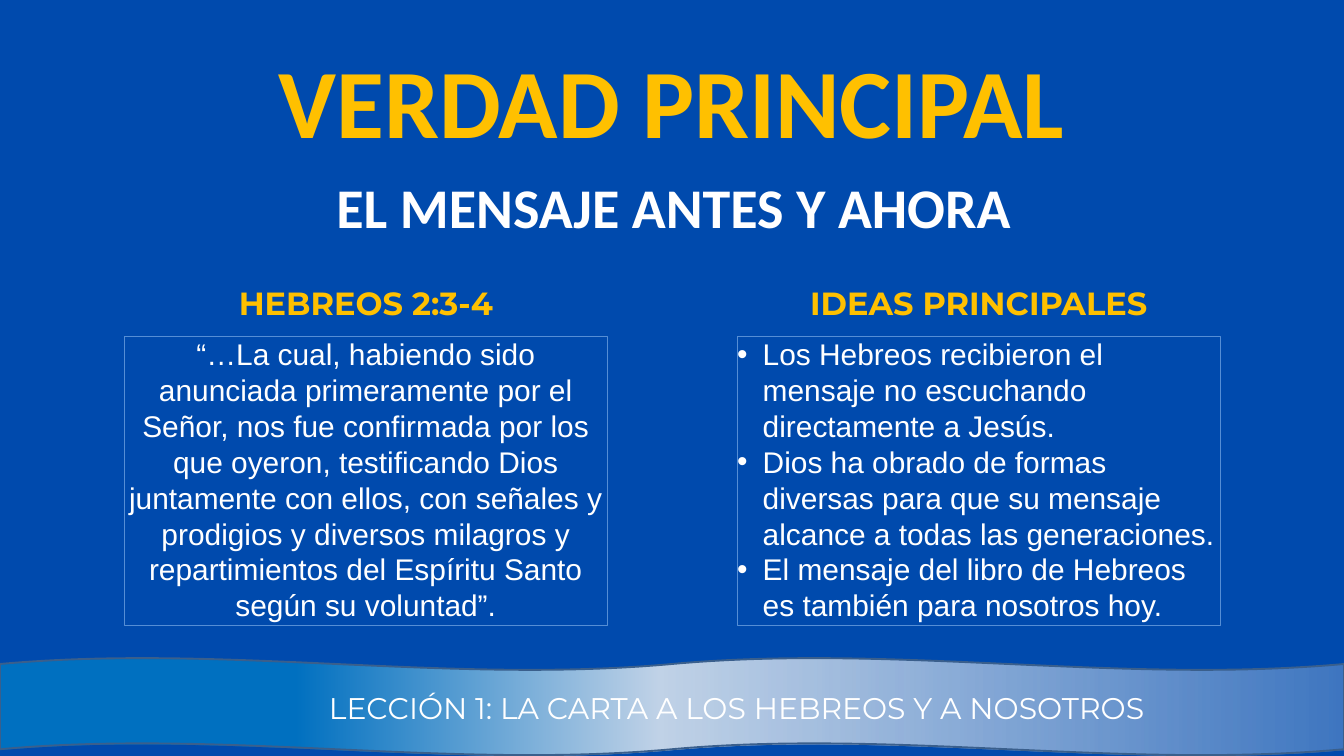
from lxml import etree
from pptx import Presentation
from pptx.dml.color import RGBColor
from pptx.enum.shapes import MSO_SHAPE
from pptx.enum.text import MSO_ANCHOR, MSO_AUTO_SIZE, PP_ALIGN
from pptx.oxml.ns import qn
from pptx.util import Inches, Pt

CENTER, LEFT = PP_ALIGN.CENTER, PP_ALIGN.LEFT
BLUE = RGBColor(0x00, 0x4A, 0xAD)
GOLD = RGBColor(0xFF, 0xC0, 0x00)
WHITE = RGBColor(0xFF, 0xFF, 0xFF)
BOX_LINE = RGBColor(0x55, 0x8E, 0xD5)
WAVE_LINE = RGBColor(0x3A, 0x5F, 0x8C)
# Position %, colour, opacity %
WAVE_STOPS = [
    (22, RGBColor(0x00, 0x70, 0xC0), 100),
    (49, RGBColor(0xC0, 0xD2, 0xE7), 100),
    (100, RGBColor(0xCA, 0xD9, 0xEB), 30),
]

# Content
TITLE = "VERDAD PRINCIPAL"
SUBTITLE = "EL MENSAJE ANTES Y AHORA"
FOOTER = "LECCIÓN 1: LA CARTA A LOS HEBREOS Y A NOSOTROS"
COLUMNS = [
    {
        "heading": "HEBREOS 2:3-4",
        "paragraphs": [
            "“…La cual, habiendo sido anunciada primeramente por el Señor, nos fue "
            "confirmada por los que oyeron, testificando Dios juntamente con ellos, "
            "con señales y prodigios y diversos milagros y repartimientos del "
            "Espíritu Santo según su voluntad”.",
        ],
        "bulleted": False,
    },
    {
        "heading": "IDEAS PRINCIPALES",
        "paragraphs": [
            "Los Hebreos recibieron el mensaje no escuchando directamente a Jesús.",
            "Dios ha obrado de formas diversas para que su mensaje alcance a todas "
            "las generaciones.",
            "El mensaje del libro de Hebreos es también para nosotros hoy.",
        ],
        "bulleted": True,
    },
]
COLUMN_LEFT, COLUMN_STEP, COLUMN_WIDTH = 1.85, 9.12, 7.19


def write_text(shape, paragraphs, font, size, color, bold=False,
               align=CENTER, spacing=None, inset=0):
    frame = shape.text_frame
    frame.word_wrap = True
    frame.vertical_anchor = MSO_ANCHOR.TOP
    frame.margin_left = frame.margin_right = Inches(inset)
    frame.margin_top = frame.margin_bottom = Inches(inset / 2)
    for index, text in enumerate(paragraphs):
        paragraph = frame.add_paragraph() if index else frame.paragraphs[0]
        paragraph.alignment = align
        if spacing:
            paragraph.line_spacing = Pt(spacing)
        run = paragraph.add_run()
        run.text = text
        run.font.name = font
        run.font.size = Pt(size)
        run.font.bold = bold
        run.font.color.rgb = color


def add_text(slide, box, text, *style, **options):
    shape = slide.shapes.add_textbox(*map(Inches, box))
    write_text(shape, [text], *style, **options)
    shape.text_frame.auto_size = MSO_AUTO_SIZE.SHAPE_TO_FIT_TEXT


def add_outlined(slide, kind, box, color, width):
    shape = slide.shapes.add_shape(kind, *map(Inches, box))
    shape.shadow.inherit = False
    shape.line.color.rgb = color
    shape.line.width = Pt(width)
    return shape


def add_bullets(shape):
    for paragraph in shape.text_frame.paragraphs:
        properties = paragraph._p.get_or_add_pPr()
        properties.set("marL", str(Inches(0.38)))
        properties.set("indent", str(-Inches(0.38)))
        etree.SubElement(properties, qn("a:buFont"), typeface="Arial")
        etree.SubElement(properties, qn("a:buChar"), char="•")


def fill_wave(shape):
    shape.fill.gradient()
    shape.fill.gradient_angle = 0
    stop_list = shape._element.spPr.find(qn("a:gradFill")).find(qn("a:gsLst"))
    for stop in list(stop_list):
        stop_list.remove(stop)
    for position, color, opacity in WAVE_STOPS:
        stop = etree.SubElement(stop_list, qn("a:gs"), pos=str(position * 1000))
        fill = etree.SubElement(stop, qn("a:srgbClr"), val=str(color))
        if opacity < 100:
            etree.SubElement(fill, qn("a:alpha"), val=str(opacity * 1000))


def main():
    presentation = Presentation()
    presentation.slide_width = Inches(20)
    presentation.slide_height = Inches(11.25)
    slide = presentation.slides.add_slide(presentation.slide_layouts[6])
    slide.background.fill.solid()
    slide.background.fill.fore_color.rgb = BLUE

    # Title and subtitle
    add_text(slide, (3.57, 0.38, 12.85, 1.88), TITLE, "Calibri", 105, GOLD,
             bold=True, spacing=141.9)
    add_text(slide, (3.6, 1.59, 12.85, 1.72), SUBTITLE, "Calibri", 60, WHITE,
             bold=True, spacing=141.9)

    # Two columns: heading above an outlined box
    for index, column in enumerate(COLUMNS):
        left = COLUMN_LEFT + index * COLUMN_STEP
        add_text(slide, (left, 4.22, COLUMN_WIDTH, 0.58), column["heading"],
                 "Montserrat", 34.3, GOLD, bold=True, spacing=41.2)
        box = add_outlined(slide, MSO_SHAPE.RECTANGLE,
                           (left, 5, COLUMN_WIDTH, 4.31), BOX_LINE, 0.75)
        box.fill.background()
        write_text(box, column["paragraphs"], "Arial", 32, WHITE, spacing=38.4,
                   align=LEFT if column["bulleted"] else CENTER)
        if column["bulleted"]:
            add_bullets(box)

    # Footer wave and lesson name
    wave = add_outlined(slide, MSO_SHAPE.DOUBLE_WAVE, (0, 9.79, 20, 1.45),
                        WAVE_LINE, 2)
    fill_wave(wave)
    add_text(slide, (3.09, 10.21, 15.75, 0.64), FOOTER, "Montserrat", 32, WHITE,
             inset=0.1)

    presentation.save("out.pptx")


if __name__ == "__main__":
    main()
